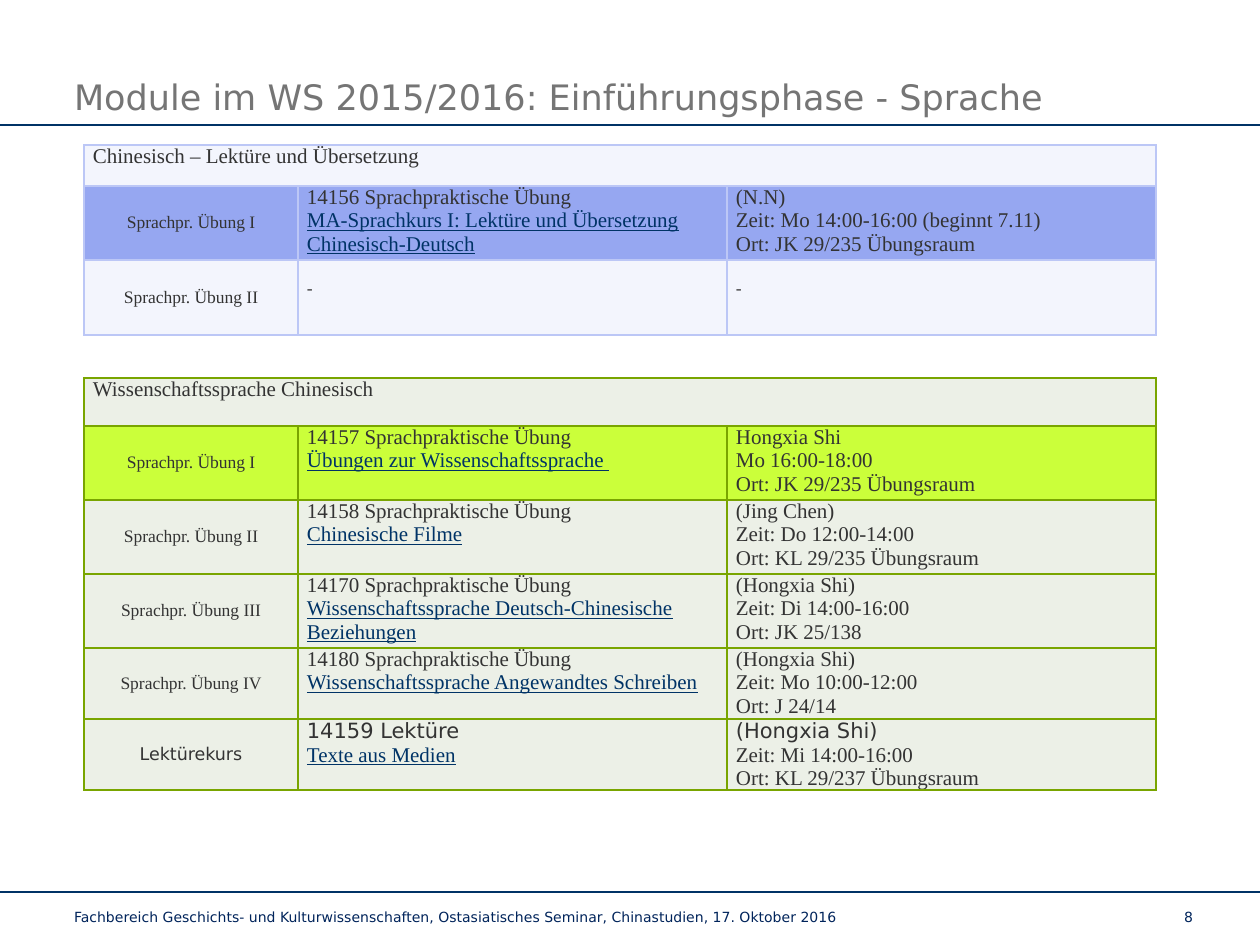
from lxml import etree
from pptx import Presentation
from pptx.dml.color import RGBColor
from pptx.enum.shapes import MSO_CONNECTOR
from pptx.enum.text import MSO_ANCHOR, MSO_AUTO_SIZE, PP_ALIGN
from pptx.oxml.ns import qn
from pptx.util import Emu, Pt

LEFT, CENTER, RIGHT = PP_ALIGN.LEFT, PP_ALIGN.CENTER, PP_ALIGN.RIGHT
TOP, MIDDLE, BOTTOM = MSO_ANCHOR.TOP, MSO_ANCHOR.MIDDLE, MSO_ANCHOR.BOTTOM
STRAIGHT = MSO_CONNECTOR.STRAIGHT
NO_FIT = MSO_AUTO_SIZE.NONE

SCALE = 914400 / 126  # EMU per px
SANS, SERIF = "DejaVu Sans", "Times New Roman"
COLORS = {
    "title": "757575", "foot": "00245B", "rule": "003366",
    "text": "333333", "link": "003366",
    "blue": "96A7F1", "pale": "F3F5FD", "edge": "BCC7F6",
    "lime": "CBFF3A", "sage": "ECF0E7", "olive": "79A500",
}
COLS = (214, 429, 429)
INSET = 9

# Each row: height, fill, label, course lines, date lines
READING = [
    (74, "blue", "Sprachpr. Übung I",
     "14156 Sprachpraktische Übung\nMA-Sprachkurs I: Lektüre und Übersetzung Chinesisch-Deutsch",
     "(N.N)\nZeit: Mo 14:00-16:00 (beginnt 7.11)\nOrt: JK 29/235 Übungsraum"),
    (75, "pale", "Sprachpr. Übung II", "-", "-"),
]
SCIENCE = [
    (74, "lime", "Sprachpr. Übung I",
     "14157 Sprachpraktische Übung\nÜbungen zur Wissenschaftssprache ",
     "Hongxia Shi\nMo 16:00-18:00\nOrt: JK 29/235 Übungsraum"),
    (74, "sage", "Sprachpr. Übung II",
     "14158 Sprachpraktische Übung\nChinesische Filme",
     "(Jing Chen)\nZeit: Do 12:00-14:00\nOrt: KL 29/235 Übungsraum"),
    (74, "sage", "Sprachpr. Übung III",
     "14170 Sprachpraktische Übung\nWissenschaftssprache Deutsch-Chinesische Beziehungen",
     "(Hongxia Shi)\nZeit: Di 14:00-16:00\nOrt: JK 25/138"),
    (71, "sage", "Sprachpr. Übung IV",
     "14180 Sprachpraktische Übung\nWissenschaftssprache Angewandtes Schreiben",
     "(Hongxia Shi)\nZeit: Mo 10:00-12:00\nOrt: J 24/14"),
    (71, "sage", "Lektürekurs",
     "14159 Lektüre\nTexte aus Medien",
     "(Hongxia Shi)\nZeit: Mi 14:00-16:00\nOrt: KL 29/237 Übungsraum"),
]


def px(num):
    return Emu(round(num * SCALE))


def rgb(name):
    return RGBColor.from_string(COLORS[name])


class Deck:
    def __init__(self):
        self.prs = Presentation()
        self.prs.slide_width, self.prs.slide_height = px(1260), px(945)
        self.slide = self.prs.slides.add_slide(self.prs.slide_layouts[5])

    def style(self, par, size, color, font=SANS, align=LEFT):
        par.alignment = align
        for run in par.runs:
            run.font.size = Pt(size)
            run.font.name = font
            run.font.color.rgb = rgb(color)

    def title(self, text, x, y, w, h):
        box = self.slide.shapes.title
        box.left, box.top, box.width, box.height = map(px, (x, y, w, h))
        frame = box.text_frame
        frame.text = text
        frame.auto_size = NO_FIT
        frame.vertical_anchor = BOTTOM
        frame.margin_left = frame.margin_right = 0
        frame.margin_top = frame.margin_bottom = 0
        par = frame.paragraphs[0]
        par.line_spacing = 0.85
        self.style(par, 20, "title")

    def rule(self, y):
        line = self.slide.shapes.add_connector(STRAIGHT, 0, px(y), px(1260), px(y))
        line.line.color.rgb = rgb("rule")
        line.line.width = Pt(0.75)
        etree.SubElement(line._element.spPr, qn("a:effectLst"))

    def note(self, text, x, y, w, h, side, align=LEFT):
        box = self.slide.shapes.add_textbox(px(x), px(y), px(w), px(h))
        frame = box.text_frame
        frame.word_wrap = True
        frame.margin_left = frame.margin_right = px(side)
        frame.text = text
        self.style(frame.paragraphs[0], 8, "foot", align=align)

    def paint(self, cell, fill, edge):
        """Give a cell its margins, borders and fill."""
        cell.margin_left = cell.margin_right = px(INSET)
        cell.margin_top = cell.margin_bottom = 0
        props = cell._tc.get_or_add_tcPr()
        for side in ("lnL", "lnR", "lnT", "lnB"):
            line = etree.SubElement(props, qn("a:" + side), w=str(Pt(1)))
            solid = etree.SubElement(line, qn("a:solidFill"))
            etree.SubElement(solid, qn("a:srgbClr"), val=COLORS[edge])
        cell.fill.solid()
        cell.fill.fore_color.rgb = rgb(fill)

    def label(self, cell, text, size=12, align=LEFT, anchor=TOP):
        cell.text = text
        cell.vertical_anchor = anchor
        for par in cell.text_frame.paragraphs:
            self.style(par, size, "text", SERIF, align)

    def table(self, x, y, head, top, fill, edge, rows):
        high = top + sum(row[0] for row in rows)
        frame = self.slide.shapes.add_table(
            len(rows) + 1, len(COLS), px(x), px(y), px(sum(COLS)), px(high))
        grid = frame.table
        grid.first_row = grid.horz_banding = False
        for col, width in zip(grid.columns, COLS):
            col.width = px(width)

        # Heading across all columns
        grid.rows[0].height = px(top)
        for col in range(len(COLS)):
            self.paint(grid.cell(0, col), fill, edge)
        grid.cell(0, 0).merge(grid.cell(0, len(COLS) - 1))
        self.label(grid.cell(0, 0), head)

        for num, (height, tint, kind, course, date) in enumerate(rows, 1):
            grid.rows[num].height = px(height)
            name, mid, last = (grid.cell(num, col) for col in range(len(COLS)))
            for cell in (name, mid, last):
                self.paint(cell, tint, edge)
            self.label(name, kind, 10, CENTER, MIDDLE)
            for cell, text in ((mid, course), (last, date)):
                self.label(cell, text, 10 if text == "-" else 12)
                if text == "-":
                    cell.margin_top = px(19)
            # Course names look like links
            for par in mid.text_frame.paragraphs[1:]:
                font = par.runs[0].font
                font.underline = True
                font.color.rgb = rgb("link")
            if kind == "Lektürekurs":
                for cell in (name, mid, last):
                    cell.text_frame.paragraphs[0].runs[0].font.name = SANS


def main():
    deck = Deck()

    # Title and rules
    deck.title("Module im WS 2015/2016: Einführungsphase - Sprache", 74, 73, 997, 45)
    for y in (125, 892):
        deck.rule(y)

    # Course tables
    deck.table(84, 145, "Chinesisch – Lektüre und Übersetzung", 41, "pale", "edge", READING)
    deck.table(84, 378, "Wissenschaftssprache Chinesisch", 48, "sage", "olive", SCIENCE)

    # Footer
    deck.note("Fachbereich Geschichts- und Kulturwissenschaften, Ostasiatisches Seminar, "
              "Chinastudien, 17. Oktober 2016", 74, 902, 989, 43, 0)
    deck.note("8", 1037, 902, 169, 33, 13, RIGHT)

    deck.prs.save("out.pptx")


if __name__ == "__main__":
    main()
